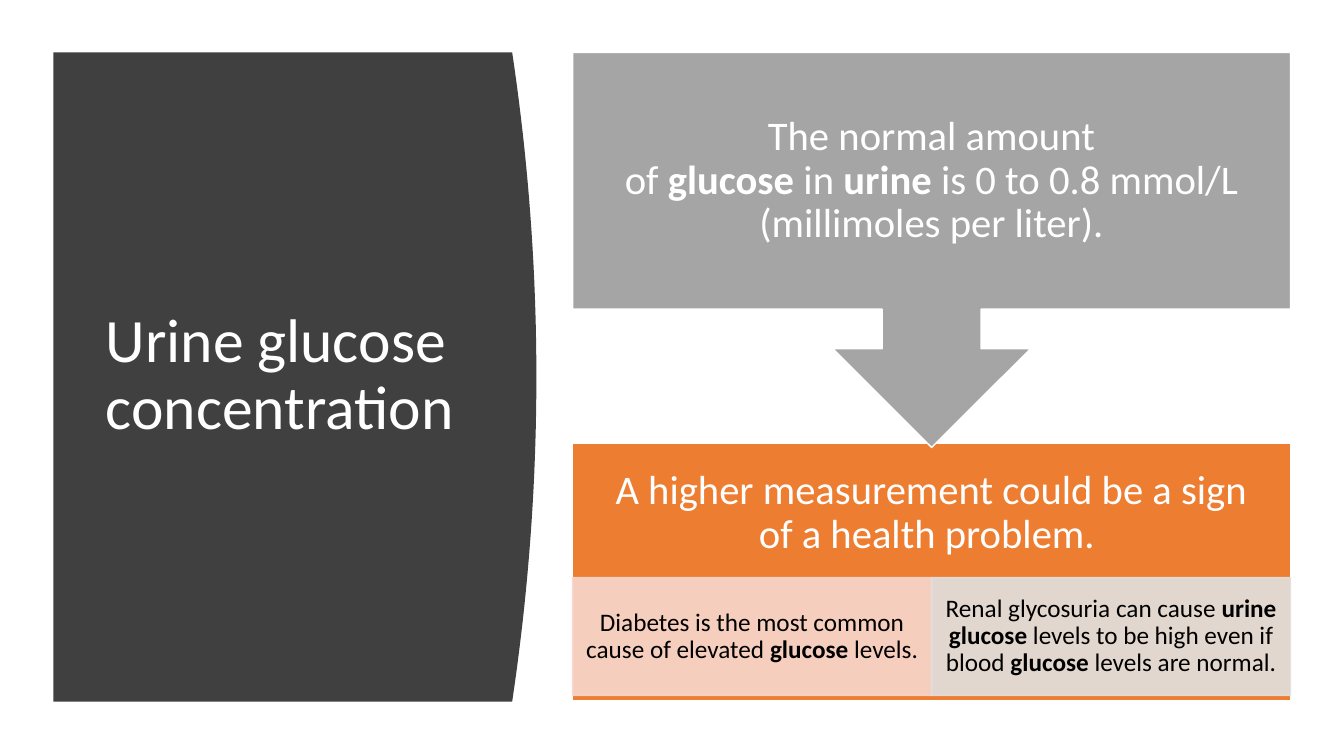
import pptx
import pptx.util
import pptx.dml.color
import pptx.enum.shapes
import pptx.enum.text
import pptx.oxml
import pptx.oxml.ns
from dataclasses import dataclass

EMU_PER_PX = 9144
CURVE_DETAIL = 100
HARD_SPACE = chr(160)


@dataclass(frozen=True)
class Theme:
    font: str = "Calibri"
    white: str = "FFFFFF"
    black: str = "000000"
    panel: str = "404040"
    callout: str = "A5A5A5"
    warning: str = "ED7D31"
    diabetes: str = "F8D7CE"
    renal: str = "E1E1E1"
    title_size: int = 44
    heading_size: int = 29
    detail_size: int = 18
    detail_opacity: int = 90


THEME = Theme()
RECTANGLE = pptx.enum.shapes.MSO_SHAPE.RECTANGLE
CALLOUT = pptx.enum.shapes.MSO_SHAPE.UP_ARROW_CALLOUT
LEFT = pptx.enum.text.PP_ALIGN.LEFT
CENTER = pptx.enum.text.PP_ALIGN.CENTER


def px(*lengths):
    return [pptx.util.Emu(length * EMU_PER_PX) for length in lengths]


def rgb(color):
    return pptx.dml.color.RGBColor.from_string(color)


def paint(shape, fill, line=None):
    shape.shadow.inherit = False
    shape.fill.solid()
    shape.fill.fore_color.rgb = rgb(fill)
    if line:
        shape.line.color.rgb = rgb(line)
        shape.line.width = pptx.util.Pt(1)
    else:
        shape.line.fill.background()


def set_opacity(shape, percent):
    for color in shape.element.spPr.iter(pptx.oxml.ns.qn("a:srgbClr")):
        alpha = pptx.oxml.parse_xml(
            f'<a:alpha {pptx.oxml.ns.nsdecls("a")} val="{percent * 1000}"/>'
        )
        color.append(alpha)


def write_text(box, pieces, size, color, align, insets):
    frame = box.text_frame
    frame.word_wrap = True
    frame.vertical_anchor = pptx.enum.text.MSO_ANCHOR.MIDDLE
    frame.margin_left, frame.margin_top = px(*insets)
    frame.margin_right, frame.margin_bottom = px(*insets)
    para = frame.paragraphs[0]
    para.alignment = align
    para.line_spacing = 0.9
    for index, piece in enumerate(pieces):
        bold = index % 2 == 1
        before = HARD_SPACE if index > 0 and not bold else ""
        after = HARD_SPACE if index < len(pieces) - 1 and not bold else ""
        span = para.add_run()
        span.text = before + piece + after
        span.font.name = THEME.font
        span.font.size = pptx.util.Pt(size)
        span.font.color.rgb = rgb(color)
        span.font.bold = bold


def add_curved_panel(page, left, top, edge, bulge, height):
    steps = 40
    outline = []
    for step in range(steps + 1):
        offset = 2 * step / steps - 1
        x = edge + bulge * (1 - offset**2)
        outline.append((x, top + height * step / steps))
    outline.append((left, top + height))
    builder = page.shapes.build_freeform(
        left * CURVE_DETAIL, top * CURVE_DETAIL, scale=EMU_PER_PX / CURVE_DETAIL
    )
    builder.add_line_segments(
        [(x * CURVE_DETAIL, y * CURVE_DETAIL) for x, y in outline], close=True
    )
    paint(builder.convert_to_shape(), THEME.panel)


def add_block(page, kind, bounds, fill, line):
    block = page.shapes.add_shape(kind, *px(*bounds))
    paint(block, fill, line)
    return block


def add_label(page, bounds, pieces, size, align=CENTER, insets=(23, 23)):
    label = page.shapes.add_textbox(*px(*bounds))
    write_text(label, pieces, size, THEME.white, align, insets)


def add_detail(page, bounds, pieces, fill):
    detail = add_block(page, RECTANGLE, bounds, fill, fill)
    set_opacity(detail, THEME.detail_opacity)
    write_text(detail, pieces, THEME.detail_size, THEME.black, CENTER, (13, 3))


def main():
    deck = pptx.Presentation()
    deck.slide_width, deck.slide_height = px(1333, 750)
    page = deck.slides.add_slide(deck.slide_layouts[6])

    add_curved_panel(page, left=53, top=52, edge=508, bulge=24, height=644)
    add_label(page, (95, 111, 374, 524), ["Urine glucose concentration"],
              THEME.title_size, LEFT, (10, 5))

    left, width = 568, 712
    add_block(page, RECTANGLE, (left, 440, width, 255), THEME.warning, THEME.white)
    add_label(page, (left, 440, width, 138),
              ["A higher measurement could be a sign of a health problem. "],
              THEME.heading_size)

    details = [
        (["Diabetes is the most common cause of elevated", "glucose", "levels."],
         THEME.diabetes),
        (["Renal glycosuria can cause", "urine glucose",
          "levels to be high even if blood", "glucose", "levels are normal."],
         THEME.renal),
    ]
    detail_width = width // len(details)
    for column, (pieces, fill) in enumerate(details):
        bounds = (left + column * detail_width, 573, detail_width, 117)
        add_detail(page, bounds, pieces, fill)

    callout = add_block(page, CALLOUT, (left, 52, width, 392), THEME.callout, THEME.white)
    callout.rotation = 180
    add_label(page, (left, 52, width, 255),
              ["The normal amount of", "glucose", "in", "urine",
               "is 0 to 0.8 mmol/L (millimoles per liter)."],
              THEME.heading_size)

    deck.save("out.pptx")


if __name__ == "__main__":
    main()
